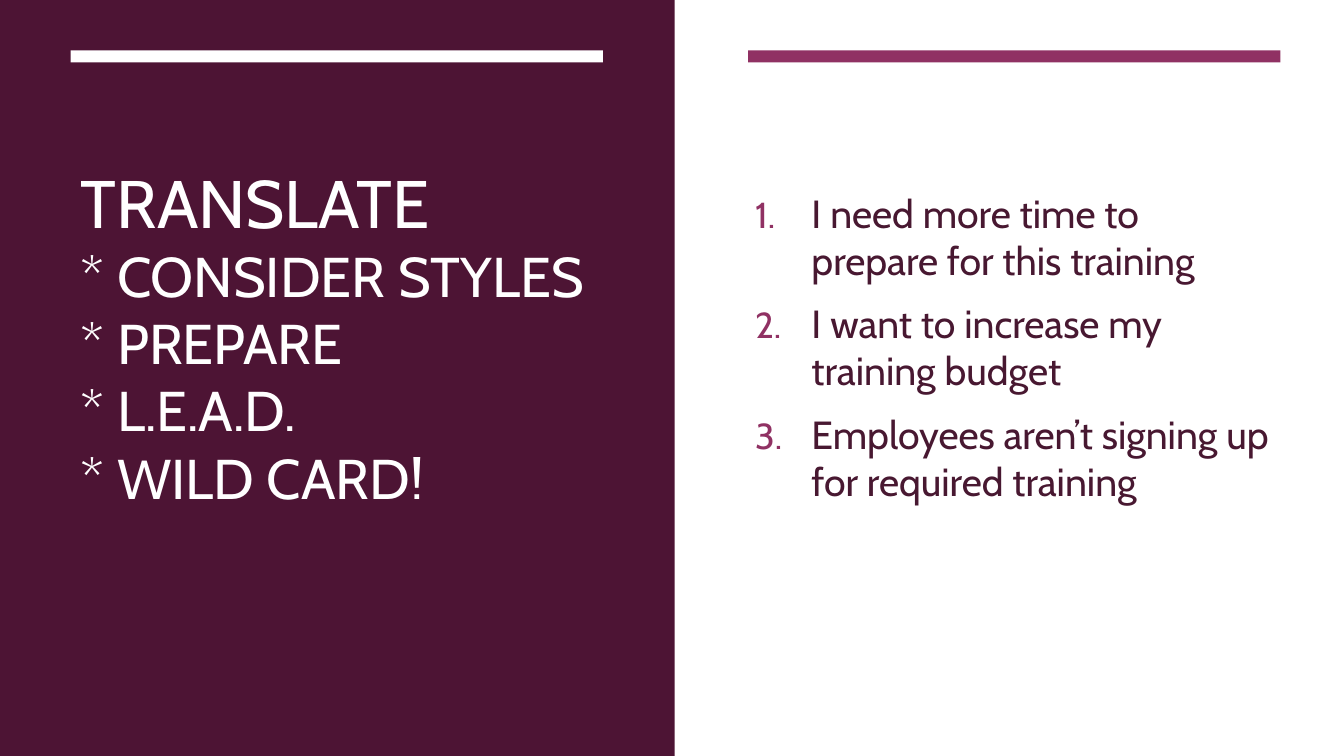
import dataclasses

import lxml.etree
import pptx
import pptx.dml.color
import pptx.enum.shapes
import pptx.enum.text
import pptx.oxml.ns
import pptx.util

Inches = pptx.util.Inches
Pt = pptx.util.Pt


@dataclasses.dataclass(frozen=True)
class Theme:
    """Colours and type sizes of the slide."""
    font: str = "Cabin"
    white: str = "FFFFFF"
    plum: str = "4D1434"
    rose: str = "903163"
    ink: str = "481831"
    head: int = 48
    sub: int = 40
    body: int = 28


THEME = Theme()
STEPS = ("* CONSIDER STYLES", "* PREPARE", "* L.E.A.D.", "* WILD CARD!")
NEEDS = (
    "I need more time to prepare for this training",
    "I want to increase my training budget",
    "Employees aren’t signing up for required training",
)


def tint(code):
    """Turn a hex code into a colour."""
    return pptx.dml.color.RGBColor.from_string(code)


def write(para, text, size, color):
    """Add one styled run to a paragraph."""
    run = para.add_run()
    run.text = text
    run.font.name = THEME.font
    run.font.size = Pt(size)
    run.font.color.rgb = tint(color)


def block(slide, left, top, width, height, color):
    """Draw a plain filled rectangle."""
    shape = slide.shapes.add_shape(
        pptx.enum.shapes.MSO_SHAPE.RECTANGLE,
        Inches(left), Inches(top), Inches(width), Inches(height))
    shape.shadow.inherit = False
    shape.fill.solid()
    shape.fill.fore_color.rgb = tint(color)
    shape.line.fill.background()
    return shape


def frame(shape):
    """Set wrapping and middle anchoring, and return the text frame."""
    text = shape.text_frame
    text.word_wrap = True
    text.auto_size = pptx.enum.text.MSO_AUTO_SIZE.NONE
    text.vertical_anchor = pptx.enum.text.MSO_ANCHOR.MIDDLE
    return text


def number(para):
    """Give a paragraph a hanging coloured number."""
    props = para._p.get_or_add_pPr()
    indent = Inches(0.56)
    props.set("marL", str(indent))
    props.set("indent", str(-indent))
    tag = pptx.oxml.ns.qn
    color = lxml.etree.SubElement(props, tag("a:buClr"))
    lxml.etree.SubElement(color, tag("a:srgbClr"), val=THEME.rose)
    lxml.etree.SubElement(props, tag("a:buSzPct"), val="92000")
    lxml.etree.SubElement(props, tag("a:buFont"), typeface=THEME.font)
    lxml.etree.SubElement(props, tag("a:buAutoNum"), type="arabicPeriod")


def title_side(slide, left, top, width, height):
    """Fill the dark side with its bar and title."""
    panel = block(slide, left, top, width, height, THEME.plum)
    slide.shapes._spTree.insert(2, panel._element)
    block(slide, left + 0.7, top + 0.5, 5.28, 0.12, THEME.white)
    title = slide.shapes.title
    title.left, title.top = Inches(left + 0.7), Inches(top + 1.13)
    title.width, title.height = Inches(5.47), Inches(4.4)
    para = frame(title).paragraphs[0]
    para.alignment = pptx.enum.text.PP_ALIGN.LEFT
    para.line_spacing = 1.0
    write(para, "TRANSLATE", THEME.head, THEME.white)
    for step in STEPS:
        para.add_line_break()
        write(para, step, THEME.sub, THEME.white)


def list_side(slide, left, top):
    """Place the bar and the numbered list on the light side."""
    block(slide, left + 0.73, top + 0.5, 5.28, 0.12, THEME.rose)
    box = slide.shapes.add_textbox(
        Inches(left + 0.7), Inches(top + 1.13), Inches(5.31), Inches(4.62))
    text = frame(box)
    for index, need in enumerate(NEEDS):
        para = text.add_paragraph() if index else text.paragraphs[0]
        number(para)
        if index:
            para.space_before = Pt(11.6)
        write(para, need, THEME.body, THEME.ink)


def main():
    """Build and save the slide."""
    deck = pptx.Presentation()
    deck.slide_width, deck.slide_height = Inches(13.33), Inches(7.5)
    slide = deck.slides.add_slide(deck.slide_layouts[5])
    slide.background.fill.solid()
    slide.background.fill.fore_color.rgb = tint(THEME.white)
    title_side(slide, 0, 0, 6.69, 7.5)
    list_side(slide, 6.69, 0)
    deck.save("out.pptx")


if __name__ == "__main__":
    main()
